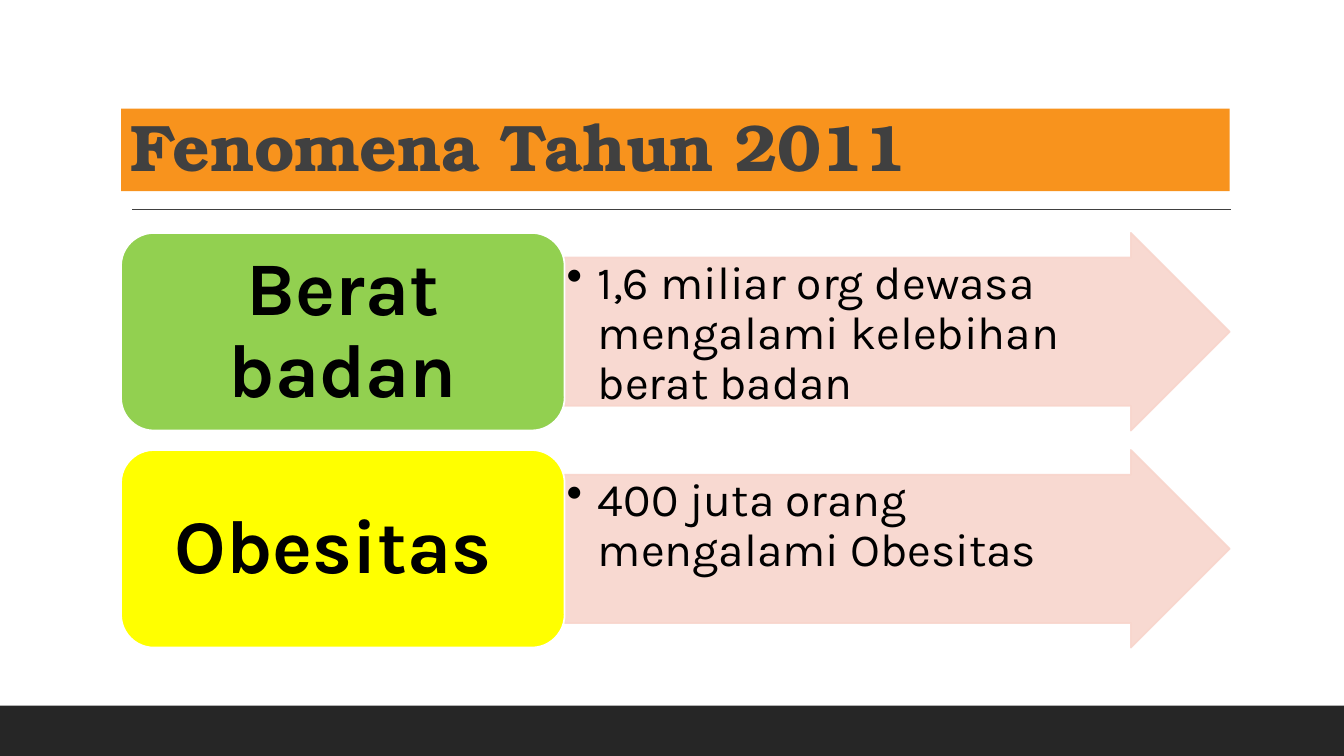
from lxml.etree import SubElement
from pptx import Presentation
from pptx.dml.color import RGBColor
from pptx.enum.shapes import MSO_CONNECTOR, MSO_SHAPE
from pptx.enum.text import MSO_ANCHOR, MSO_AUTO_SIZE, PP_ALIGN
from pptx.oxml.ns import qn
from pptx.util import Cm, Pt


def paint(color_format, hex_color):
    color_format.rgb = RGBColor.from_string(hex_color)


def write(shape, text, size, font, color="000000", bold=False, align=PP_ALIGN.LEFT,
          anchor=MSO_ANCHOR.TOP, margins=(0.25, 0.13, 0.25, 0.13)):
    """Fill a shape with one formatted paragraph; margins are left, top, right, bottom in cm."""
    frame = shape.text_frame
    frame.word_wrap = True
    frame.auto_size = MSO_AUTO_SIZE.NONE
    frame.vertical_anchor = anchor
    (frame.margin_left, frame.margin_top,
     frame.margin_right, frame.margin_bottom) = [Cm(margin) for margin in margins]
    paragraph = frame.paragraphs[0]
    paragraph.alignment = align
    paragraph.line_spacing = 0.9
    run = paragraph.add_run()
    run.text = text
    run.font.name = font
    run.font.size = Pt(size)
    run.font.bold = bold
    paint(run.font.color, color)
    return paragraph


presentation = Presentation()
presentation.slide_width = Cm(33.87)
presentation.slide_height = Cm(19.05)
slide = presentation.slides.add_slide(presentation.slide_layouts[5])
shapes = slide.shapes

# Footer band
band = shapes.add_shape(MSO_SHAPE.RECTANGLE, 0, Cm(17.78), Cm(33.87), Cm(1.27))
band.shadow.inherit = False
band.fill.solid()
paint(band.fill.fore_color, "262626")
band.line.fill.background()

# Rule below the title
rule = shapes.add_connector(MSO_CONNECTOR.STRAIGHT, Cm(3.33), Cm(5.28), Cm(31.01), Cm(5.28))
paint(rule.line.color, "404040")
rule.line.width = Pt(1)
SubElement(rule._element.spPr, qn("a:effectLst"))

# Title
title = shapes.title
title.left, title.top, title.width, title.height = Cm(3.05), Cm(2.74), Cm(27.94), Cm(2.08)
title.fill.solid()
paint(title.fill.fore_color, "F8931D")
heading = write(title, "Fenomena Tahun 2011", 47, "TeX Gyre Bonum", color="404040",
                bold=True, anchor=MSO_ANCHOR.BOTTOM)
heading.runs[0].font._element.set("spc", "-50")

# One row per topic: an arrow with the fact, and a rounded label at its tail
ROWS = [
    ("Berat badan", "92D050", "1,6 miliar org dewasa mengalami kelebihan berat badan"),
    ("Obesitas ", "FFFF00", "400 juta orang mengalami Obesitas"),
]
LEFT, TOP, LABEL_WIDTH, ARROW_WIDTH, ROW_HEIGHT, ROW_STEP = 3.05, 5.87, 11.18, 16.76, 4.98, 5.47

for index, (topic, topic_color, fact) in enumerate(ROWS):
    top = Cm(TOP + index * ROW_STEP)
    arrow = shapes.add_shape(MSO_SHAPE.RIGHT_ARROW, Cm(LEFT + LABEL_WIDTH), top,
                             Cm(ARROW_WIDTH), Cm(ROW_HEIGHT))
    arrow.adjustments[0] = 0.75
    label = shapes.add_shape(MSO_SHAPE.ROUNDED_RECTANGLE, Cm(LEFT), top,
                             Cm(LABEL_WIDTH), Cm(ROW_HEIGHT))
    for shape, fill, line in ((arrow, "F8D5CC", "F8D5CC"), (label, topic_color, "FFFFFF")):
        shape.shadow.inherit = False
        shape.fill.solid()
        paint(shape.fill.fore_color, fill)
        paint(shape.line.color, line)
        shape.line.width = Pt(1.25)

    # Slightly transparent arrow
    for color in arrow._element.spPr.iter(qn("a:srgbClr")):
        SubElement(color, qn("a:alpha"), val="90000")

    # Bulleted fact with a hanging indent
    bullet = write(arrow, fact, 33, "Karla", margins=(0.05, 0.05, 1.27, 0.05))
    properties = bullet._element.get_or_add_pPr()
    properties.set("marL", str(Cm(0.79)))
    properties.set("indent", str(-Cm(0.79)))
    SubElement(properties, qn("a:buChar"), char="•")

    write(label, topic, 54, "Karla", bold=True, align=PP_ALIGN.CENTER,
          anchor=MSO_ANCHOR.MIDDLE, margins=(0.58, 0.28, 0.58, 0.28))

presentation.save("out.pptx")
